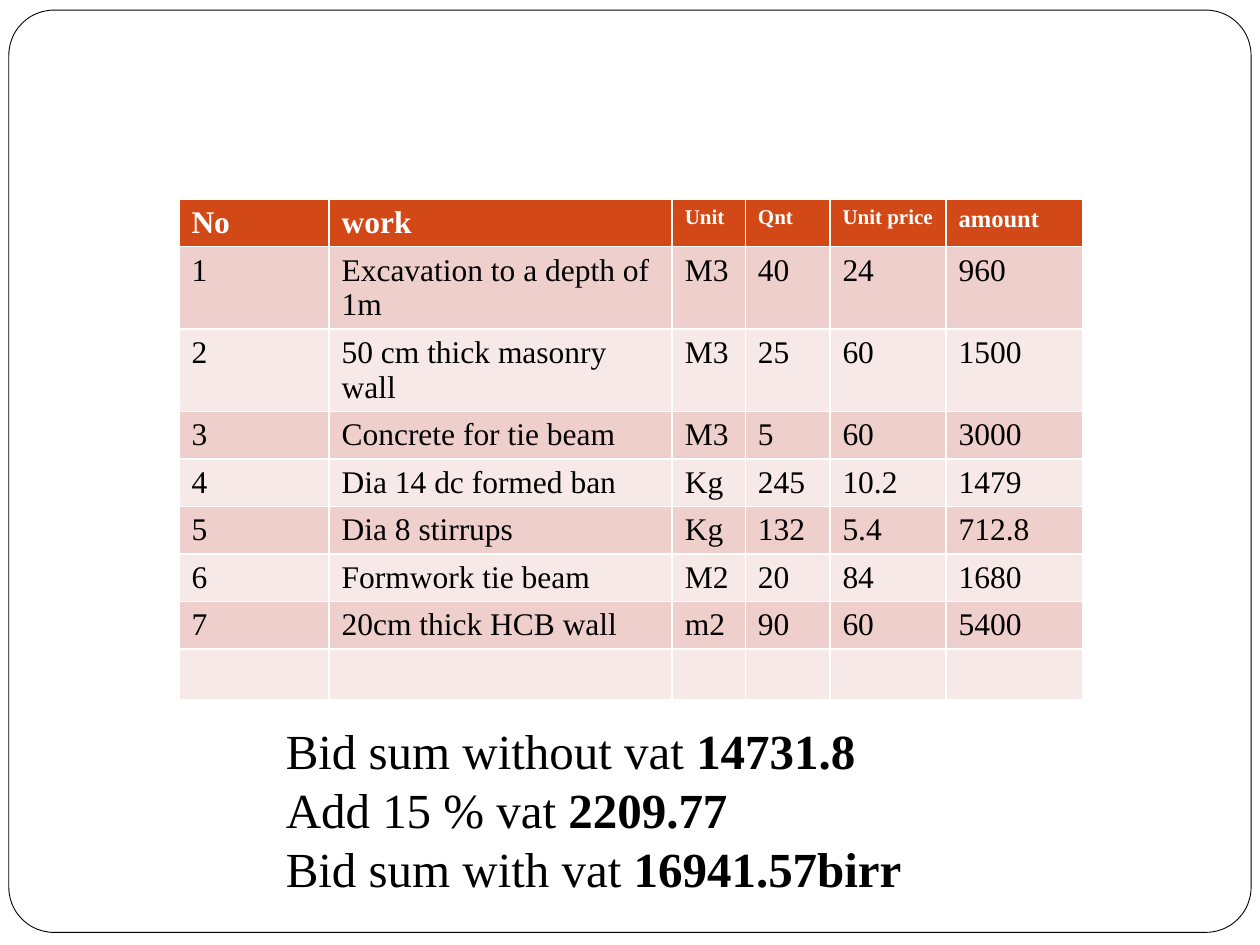
from pptx import Presentation
from pptx.dml.color import RGBColor
from pptx.enum.shapes import MSO_SHAPE
from pptx.util import Inches, Pt

WIDTH, HEIGHT = 10, 7.5
FONT = "Times New Roman"
INK, PAPER, HEADER = "000000", "FFFFFF", "D34817"
BANDS = ["EFCFCC", "F7E9E8"]
COLUMN_WIDTHS = [1.19, 2.72, 0.58, 0.67, 0.92, 1.08]
LINE_ROW, WRAPPED_ROW = 0.37, 0.63
WRAPPED_ITEMS = (1, 2)
HEADER_SIZES = [18, 18, 12, 12, 12, 14]
BILL = [
    ["No", "work", "Unit", "Qnt", "Unit price", "amount"],
    ["1", "Excavation to a depth of 1m", "M3", "40", "24", "960"],
    ["2", "50 cm thick masonry wall", "M3", "25", "60", "1500"],
    ["3", "Concrete for tie beam", "M3", "5", "60", "3000"],
    ["4", "Dia 14 dc formed ban", "Kg", "245", "10.2", "1479"],
    ["5", "Dia 8 stirrups", "Kg", "132", "5.4", "712.8"],
    ["6", "Formwork tie beam", "M2", "20", "84", "1680"],
    ["7", "20cm thick HCB wall", "m2", "90", "60", "5400"],
    [""] * 6,
]
TOTALS = [
    ("Bid sum without vat ", "14731.8"),
    ("Add 15 % vat ", "2209.77"),
    ("Bid sum with vat ", "16941.57birr"),
]


def color(hex_code):
    """Turn a hex string into a colour."""
    return RGBColor.from_string(hex_code)


def paint(part, hex_code):
    """Give a shape or cell a solid fill."""
    part.fill.solid()
    part.fill.fore_color.rgb = color(hex_code)


def style(font, size, hex_code, bold=False):
    """Set the font values of a run or paragraph."""
    values = {"name": FONT, "size": Pt(size), "bold": bold}
    for name, value in values.items():
        setattr(font, name, value)
    font.color.rgb = color(hex_code)


def add_frame(slide, box):
    """Draw the rounded outline around the slide."""
    frame = slide.shapes.add_shape(MSO_SHAPE.ROUNDED_RECTANGLE, *map(Inches, box))
    frame.adjustments[0] = 0.049
    frame.shadow.inherit = False
    paint(frame, PAPER)
    frame.line.color.rgb = color(INK)
    frame.line.width = Pt(0.5)


def add_bill(slide, box):
    """Place the bill of quantities, its columns shared out over the box."""
    left, top, width, height = map(Inches, box)
    bill = slide.shapes.add_table(len(BILL), len(BILL[0]), left, top, width, height).table
    for column, share in zip(bill.columns, COLUMN_WIDTHS):
        column.width = int(width * share / sum(COLUMN_WIDTHS))
    for item, entries in enumerate(BILL):
        is_header = item == 0
        bill.rows[item].height = Inches(WRAPPED_ROW if item in WRAPPED_ITEMS else LINE_ROW)
        for position, entry in enumerate(entries):
            cell = bill.cell(item, position)
            paint(cell, HEADER if is_header else BANDS[(item - 1) % 2])
            if entry:
                run = cell.text_frame.paragraphs[0].add_run()
                run.text = entry
                size = HEADER_SIZES[position] if is_header else 18
                style(run.font, size, PAPER if is_header else INK, is_header)


def add_totals(slide, box):
    """Write the bid sums, one line each with a bold figure."""
    totals = slide.shapes.add_textbox(*map(Inches, box)).text_frame
    totals.word_wrap = True
    for line, (label, figure) in enumerate(TOTALS):
        paragraph = totals.add_paragraph() if line else totals.paragraphs[0]
        for words, bold in ((label, False), (figure, True)):
            run = paragraph.add_run()
            run.text = words
            style(run.font, 28, INK, bold)


def main():
    """Build and save the slide."""
    deck = Presentation()
    deck.slide_width, deck.slide_height = Inches(WIDTH), Inches(HEIGHT)
    slide = deck.slides.add_slide(deck.slide_layouts[6])
    add_frame(slide, (0.07, 0.08, WIDTH - 0.14, HEIGHT - 0.18))
    add_bill(slide, (1.42, 1.58, 7.17, 4.17))
    add_totals(slide, (2.17, 5.67, 6.5, 1.51))
    deck.save("out.pptx")


if __name__ == "__main__":
    main()
